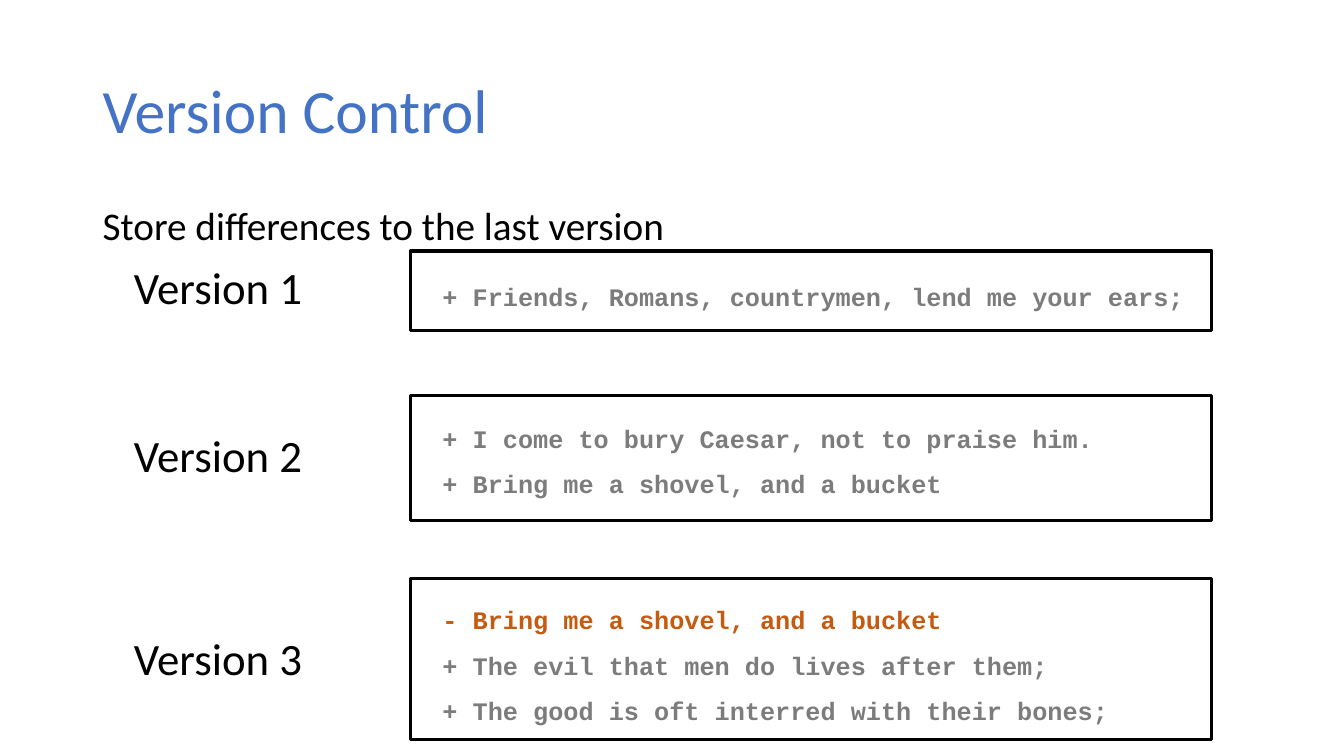
"""Build the Version Control slide: three versions stored as line differences."""
from pptx import Presentation
from pptx import util as u
from pptx.dml.color import RGBColor
from pptx.enum import shapes, text

BLUE = RGBColor(0x44, 0x72, 0xC4)
BLACK = RGBColor(0, 0, 0)
ADDED = RGBColor(0x7C, 0x7C, 0x7C)
REMOVED = RGBColor(0xC5, 0x5A, 0x11)

deck = Presentation()
deck.slide_width = u.Inches(13.33)
deck.slide_height = u.Inches(7.5)
slide = deck.slides.add_slide(deck.slide_layouts[6])


def add_text(area, lines, size, font, color, spacing=1.0, bold=False, wrap=True):
    """Add a text box with one paragraph per line and return its frame."""
    frame = slide.shapes.add_textbox(*map(u.Inches, area)).text_frame
    frame.word_wrap = wrap
    frame.text = "\n".join(lines)
    for paragraph in frame.paragraphs:
        paragraph.line_spacing = spacing
        run_font = paragraph.runs[0].font
        run_font.size = u.Pt(size)
        run_font.name = font
        run_font.bold = bold
        run_font.color.rgb = REMOVED if paragraph.text.startswith("-") else color
    return frame


title = add_text((0.92, 0.4, 11.5, 1.45), ["Version Control"], 44, "Calibri", BLUE, 0.9)
title.vertical_anchor = text.MSO_ANCHOR.MIDDLE
summary = add_text((0.92, 2, 11.5, 4.76), ["Store differences to the last version"],
                   28, "Calibri", BLACK, 0.9)
summary.paragraphs[0].space_before = u.Pt(10)

LABEL_LEFT, FRAME_LEFT, DIFF_LEFT = 1.23, 4.07, 4.29
versions = [
    (2.53, 2.49, 0.79, 2.59, 0.52, ["+ Friends, Romans, countrymen, lend me your ears;"]),
    (4.19, 3.92, 1.24, 4.0, 1.01, ["+ I come to bury Caesar, not to praise him.",
                                   "+ Bring me a shovel, and a bucket"]),
    (6.21, 5.74, 1.6, 5.8, 1.46, ["- Bring me a shovel, and a bucket",
                                  "+ The evil that men do lives after them;",
                                  "+ The good is oft interred with their bones;"]),
]
for number, (label_top, frame_top, frame_height, diff_top, diff_height, diff) in enumerate(versions, 1):
    add_text((LABEL_LEFT, label_top, 1.89, 0.64), [f"Version {number}"],
             32, "Calibri", BLACK, wrap=False)
    add_text((DIFF_LEFT, diff_top, 7.9, diff_height), diff, 18, "Courier New", ADDED, 1.5, bold=True)
    border = slide.shapes.add_shape(
        shapes.MSO_SHAPE.RECTANGLE,
        *map(u.Inches, (FRAME_LEFT, frame_top, 7.95, frame_height)))
    border.shadow.inherit = False
    border.fill.background()
    border.line.color.rgb = BLACK
    border.line.width = u.Pt(2.25)

deck.save("out.pptx")
